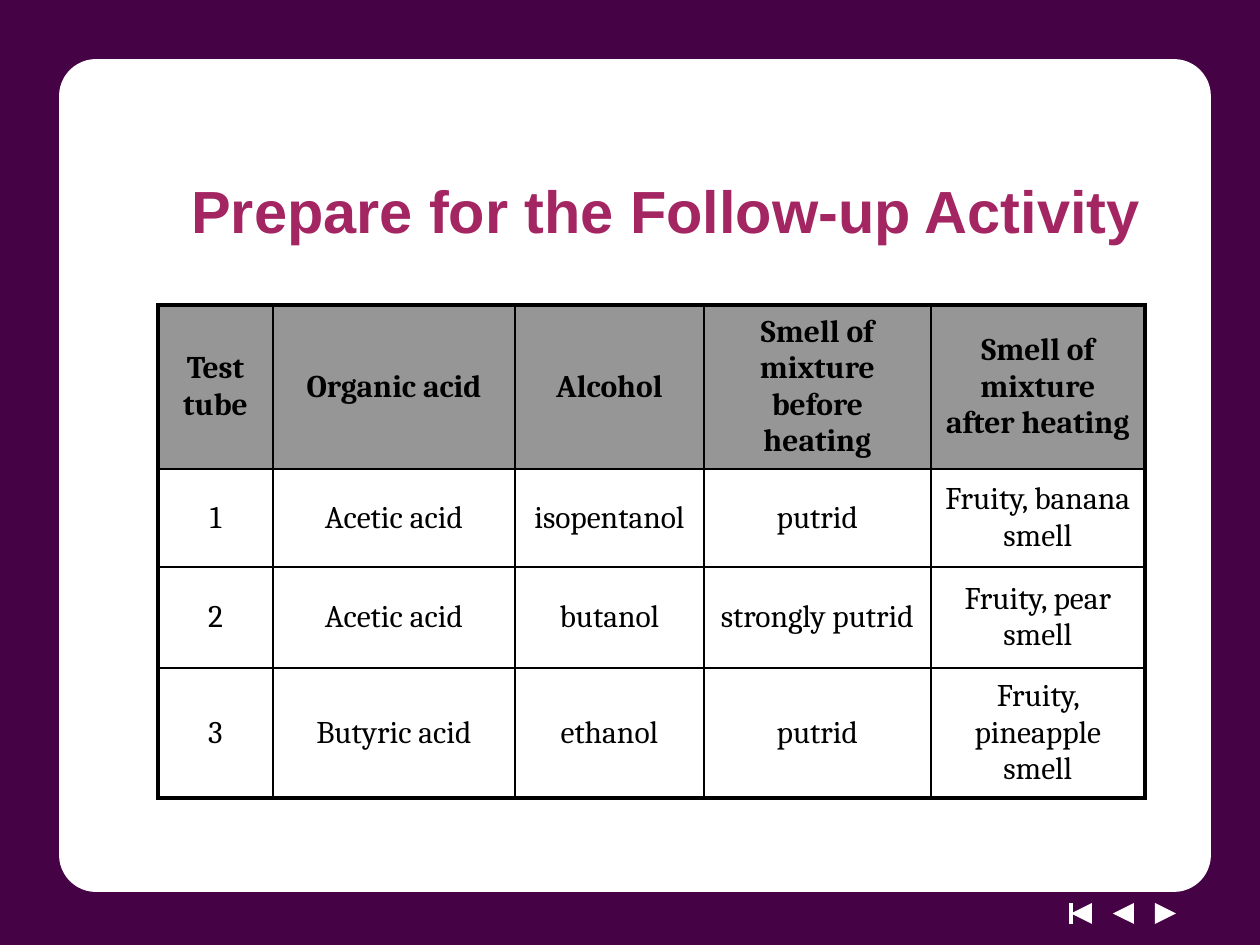
from lxml.etree import SubElement
from pptx import Presentation
from pptx.dml.color import RGBColor
from pptx.enum.shapes import MSO_CONNECTOR, MSO_SHAPE
from pptx.enum.text import MSO_ANCHOR, PP_ALIGN
from pptx.oxml.ns import qn
from pptx.util import Pt

PX = 914400 // 126  # EMU per px
PURPLE = RGBColor(0x45, 0x02, 0x45)
MAGENTA = RGBColor(0xA3, 0x25, 0x61)
GRAY = RGBColor(0x96, 0x96, 0x96)
WHITE = RGBColor(0xFF, 0xFF, 0xFF)
BLACK = RGBColor(0x00, 0x00, 0x00)


def add_block(kind, x, y, w, h, color):
    sp = s.shapes.add_shape(kind, x * PX, y * PX, w * PX, h * PX)
    sp.shadow.inherit = False
    sp.fill.solid()
    sp.fill.fore_color.rgb = color
    sp.line.fill.background()
    return sp


def add_border(cell, side, width):
    ln = SubElement(cell._tc.get_or_add_tcPr(), qn(f"a:ln{side}"), w=str(Pt(width)))
    fill = SubElement(ln, qn("a:solidFill"))
    SubElement(fill, qn("a:srgbClr"), val=str(BLACK))


prs = Presentation()
prs.slide_width, prs.slide_height = 1260 * PX, 945 * PX
s = prs.slides.add_slide(prs.slide_layouts[6])

# Purple frame
add_block(MSO_SHAPE.RECTANGLE, 0, 0, 1260, 945, PURPLE)

# Navigation arrows: next, previous, first
for x, rotation in ((1155, 90), (1113, 270), (1071, 270)):
    sp = add_block(MSO_SHAPE.ISOSCELES_TRIANGLE, x, 903, 21, 21, WHITE)
    sp.rotation = rotation
bar = s.shapes.add_connector(MSO_CONNECTOR.STRAIGHT, 1071 * PX, 903 * PX, 1071 * PX, 924 * PX)
bar.line.color.rgb = WHITE
bar.line.width = Pt(2)
SubElement(bar._element.spPr, qn("a:effectLst"))

# White panel
panel = add_block(MSO_SHAPE.ROUNDED_RECTANGLE, 63, 63, 1144, 825, WHITE)
panel.adjustments[0] = 0.04
panel.line.color.rgb = WHITE
panel.line.width = Pt(4.5)

# Title
tf = s.shapes.add_textbox(179 * PX, 147 * PX, 1018 * PX, 126 * PX).text_frame
tf.word_wrap = True
tf.vertical_anchor = MSO_ANCHOR.MIDDLE
r = tf.paragraphs[0].add_run()
r.text = "Prepare for the Follow-up Activity"
r.font.name, r.font.size, r.font.bold = "Arial", Pt(34), True
r.font.color.rgb = MAGENTA

# Table of smells
ROWS = [
    ("Test tube", "Organic acid", "Alcohol",
     "Smell of mixture before heating", "Smell of mixture after heating"),
    ("1", "Acetic acid", "isopentanol", "putrid", "Fruity, banana smell"),
    ("2", "Acetic acid", "butanol", "strongly putrid", "Fruity, pear smell"),
    ("3", "Butyric acid", "ethanol", "putrid", "Fruity, pineapple smell"),
]
COL_WIDTHS = (115, 242, 189, 227, 214)
ROW_HEIGHTS = (164, 98, 101, 130)
last_row, last_col = len(ROWS) - 1, len(COL_WIDTHS) - 1

table = s.shapes.add_table(len(ROWS), len(COL_WIDTHS), 158 * PX, 305 * PX,
                           sum(COL_WIDTHS) * PX, sum(ROW_HEIGHTS) * PX).table
for column, width in zip(table.columns, COL_WIDTHS):
    column.width = width * PX
for row, height in zip(table.rows, ROW_HEIGHTS):
    row.height = height * PX

for i, texts in enumerate(ROWS):
    for j, text in enumerate(texts):
        cell = table.cell(i, j)
        cell.vertical_anchor = MSO_ANCHOR.MIDDLE
        # Thick outer edge, thin inner lines
        edges = {"L": j == 0, "R": j == last_col, "T": i == 0, "B": i == last_row}
        for side, outer in edges.items():
            add_border(cell, side, 2.25 if outer else 1)
        if i == 0:
            cell.fill.solid()
            cell.fill.fore_color.rgb = GRAY
        else:
            cell.fill.background()
        p = cell.text_frame.paragraphs[0]
        p.alignment = PP_ALIGN.CENTER
        r = p.add_run()
        r.text = text
        r.font.name, r.font.size, r.font.bold = "Cambria", Pt(18), i == 0
        r.font.color.rgb = BLACK

prs.save("out.pptx")
